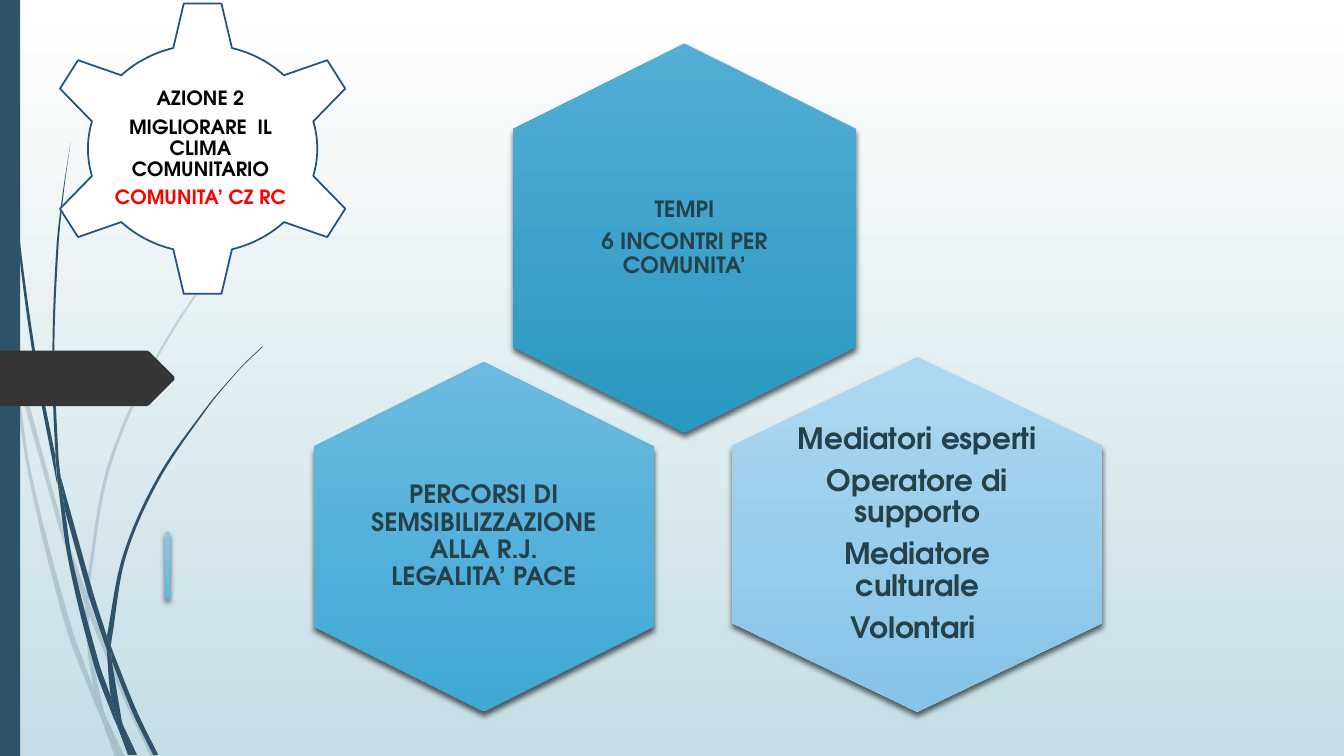
from math import dist

from lxml import etree
from pptx import Presentation
from pptx.dml.color import RGBColor
from pptx.enum.shapes import MSO_SHAPE
from pptx.enum.text import MSO_ANCHOR, PP_ALIGN
from pptx.oxml.ns import qn
from pptx.util import Pt

RECTANGLE, HEXAGON, GEAR = MSO_SHAPE.RECTANGLE, MSO_SHAPE.HEXAGON, MSO_SHAPE.GEAR_6
MIDDLE, CENTER = MSO_ANCHOR.MIDDLE, PP_ALIGN.CENTER
FONT = "TeX Gyre Adventor"
WHITE, BLACK, RED = RGBColor(255, 255, 255), RGBColor(0, 0, 0), RGBColor(255, 0, 0)
MIST = RGBColor(0xC5, 0xDE, 0xE5)
SLATE = RGBColor(0x2E, 0x53, 0x69)
CHARCOAL = RGBColor(0x35, 0x35, 0x35)
GEAR_BLUE = RGBColor(0x22, 0x51, 0x84)
HEXAGON_TEXT = RGBColor(0x25, 0x41, 0x49)

GRID = 0.72  # points per unit of the outlines below

# Each piece is two smooth edges that together close its outline.
PALE_STEMS = [
    ([(11, 350), (9, 322), (0, 282)], [(0, 299), (10, 344), (11, 350)]),
    ([(58, 522), (84, 599)], [(85, 586), (62, 520), (14, 345)], [(17, 376), (58, 522)]),
    ([(92, 607), (88, 596)], [(88, 610), (123, 694), (150, 751)],
     [(155, 751), (127, 692), (92, 607)]),
    ([(119, 751), (124, 751)], [(105, 711), (119, 751)]),
    ([(93, 683), (70, 619), (31, 469), (17, 376), (11, 350)],
     [(11, 350), (28, 470), (65, 621), (92, 693), (101, 714)],
     [(101, 714), (99, 707), (93, 683)]),
    ([(84, 599), (87, 646), (93, 683), (96, 692), (105, 711)],
     [(105, 711), (103, 706), (91, 646), (88, 610)], [(88, 608), (84, 599)]),
    ([(88, 584), (110, 462), (160, 349), (229, 245), (268, 198), (290, 175), (312, 154)],
     [(312, 153), (289, 175), (268, 197), (228, 244), (158, 348), (107, 461), (85, 584)],
     [(85, 586), (88, 596)]),
    ([(101, 714), (114, 751)], [(119, 751), (101, 714)]),
    ([(88, 608), (88, 610)], [(88, 596), (85, 586)], [(84, 599), (88, 608)]),
    ([(96, 692), (93, 683)], [(99, 707), (101, 714), (119, 751)],
     [(119, 751), (105, 711), (96, 692)]),
]
DARK_STEMS = [
    ([(7, 110), (17, 233), (33, 355), (56, 477), (57, 481)],
     [(55, 457), (55, 453), (36, 355), (19, 232), (8, 109), (5, 48), (4, 0)],
     [(3, 0), (4, 48), (7, 110)]),
    ([(88, 592), (106, 645)], [(106, 633), (106, 631), (93, 590), (60, 472)],
     [(64, 505), (88, 592)]),
    ([(113, 649), (110, 641)], [(111, 656), (132, 708), (152, 749)],
     [(157, 749), (136, 706), (113, 649)]),
    ([(110, 691), (98, 657), (72, 556), (64, 505), (57, 477)],
     [(57, 477), (68, 557), (93, 659), (111, 708), (117, 722)],
     [(116, 717), (110, 691)]),
    ([(60, 472), (58, 453), (54, 349), (58, 245), (63, 193), (70, 141)],
     [(70, 141), (62, 193), (56, 245), (52, 349), (55, 449), (60, 472)]),
    ([(133, 749), (136, 749)], [(122, 719), (133, 749)]),
    ([(57, 477), (64, 505)], [(60, 472), (55, 449)], [(55, 453), (57, 477)]),
    ([(111, 633), (125, 552), (158, 476), (205, 406), (231, 374), (245, 359), (261, 344)],
     [(260, 344), (245, 358), (231, 373), (204, 405), (156, 474), (122, 551), (106, 631)],
     [(110, 641), (111, 633)]),
    ([(117, 722), (127, 749)], [(131, 749), (117, 722)]),
    ([(106, 645), (110, 691), (116, 706), (122, 719)],
     [(121, 716), (111, 656)], [(109, 651), (106, 645)]),
    ([(106, 645), (109, 651), (111, 656)], [(110, 641), (106, 631)],
     [(106, 633), (106, 645)]),
    ([(116, 706), (110, 691)], [(116, 717), (117, 722), (130, 749)],
     [(133, 749), (122, 719), (116, 706)]),
]
ARROW = [(173, 29), (148, 54), (146, 55), (0, 55), (0, 0), (146, 0), (148, 1), (173, 26)]

# Box, text area size, font size, gradient colours, paragraphs
HEXAGONS = [
    ((366.5, 31, 244.8, 277.9), (167.8, 190.8), 16, ("53ADD5", "2998C2"),
     ["TEMPI", "6 INCONTRI PER COMUNITA’"]),
    ((224.3, 258.3, 242.6, 249.8), (163.4, 167.8), 18, ("6BBAE0", "40A8D7"),
     ["PERCORSI DI SEMSIBILIZZAZIONE ALLA R.J. LEGALITA’ PACE"]),
    ((118.1, 379.4, 3.6, 48.2), None, None, ("8BC8E9", "63B5E0"), []),
    ((523.1, 255, 264.2, 253.4), (176.4, 168.5), 21, ("AED8F1", "86C3E8"),
     ["Mediatori esperti", "Operatore di supporto", "Mediatore culturale", "Volontari "]),
]


def curve_through(points):
    """Return the points with two Bézier handles between each pair."""
    padded = [points[0], *points, points[-1]]
    curve = [points[0]]
    for before, start, end, after in zip(padded, padded[1:], padded[2:], padded[3:]):
        reach = dist(start, end) / 3
        leave = reach / dist(before, end)
        arrive = reach / dist(start, after)
        curve += [tuple(s + (e - b) * leave for b, s, e in zip(before, start, end)),
                  tuple(e - (a - s) * arrive for s, e, a in zip(start, end, after)),
                  end]
    return curve


def stem_outline(edges):
    outline = curve_through(edges[0])
    for edge in edges[1:]:
        if edge[0] != outline[-1]:
            outline += curve_through([outline[-1], edge[0]])[1:]
        outline += curve_through(edge)[1:]
    return outline


def bend_lines(shape):
    """Turn every three line segments of a freeform into one Bézier segment."""
    lines = list(shape._element.iter(qn("a:lnTo")))
    for first, second, third in zip(lines[::3], lines[1::3], lines[2::3]):
        first.tag = qn("a:cubicBezTo")
        for line in (second, third):
            first.append(line[0])
            line.getparent().remove(line)


def fill_plain(shape, color):
    shape.shadow.inherit = False
    shape.fill.solid()
    shape.fill.fore_color.rgb = color
    shape.line.fill.background()


def fill_downward(fill, top_color, bottom_color):
    fill.gradient()
    fill.gradient_angle = 270
    for stop, color in zip(fill.gradient_stops, (top_color, bottom_color)):
        stop.color.rgb = color


def add_shadow(shape):
    shape.shadow.inherit = False
    effects = shape._element.spPr.find(qn("a:effectLst"))
    shadow = etree.SubElement(effects, qn("a:outerShdw"), blurRad=str(Pt(4)),
                              dist=str(Pt(3)), dir="5400000", rotWithShape="0")
    color = etree.SubElement(shadow, qn("a:srgbClr"), val="000000")
    etree.SubElement(color, qn("a:alpha"), val="60000")


def draw_outline(slide, left, top, points, color):
    corners = [(Pt(GRID * x), Pt(GRID * y)) for x, y in points]
    builder = slide.shapes.build_freeform(*corners[0])
    builder.add_line_segments(corners[1:], close=True)
    shape = builder.convert_to_shape(Pt(left), Pt(top))
    fill_plain(shape, color)
    return shape


def draw_stems(slide, left, top):
    for stems, opacity in ((PALE_STEMS, 20), (DARK_STEMS, 100)):
        for edges in stems:
            shape = draw_outline(slide, left, top, stem_outline(edges), SLATE)
            bend_lines(shape)
            if opacity < 100:
                color = shape._element.spPr.find(qn("a:solidFill"))[0]
                etree.SubElement(color, qn("a:alpha"), val=str(opacity * 1000))


def draw_side_band(slide, left, top, width, height):
    band = slide.shapes.add_shape(RECTANGLE, Pt(left), Pt(top), Pt(width), Pt(height))
    fill_plain(band, SLATE)
    draw_outline(slide, left, top + 250.4, ARROW, CHARCOAL)


def add_text(slide, box, size, lines, inset=0):
    """Add a text area filling the box; lines are (text, color)."""
    frame = slide.shapes.add_textbox(*map(Pt, box)).text_frame
    frame.word_wrap = True
    frame.vertical_anchor = MIDDLE
    frame.margin_left = frame.margin_right = Pt(inset)
    frame.margin_top = frame.margin_bottom = Pt(inset)
    frame.text = "\n".join(text for text, _ in lines)
    for para, (_, color) in zip(frame.paragraphs, lines):
        para.alignment = CENTER
        para.line_spacing = 0.9
        para.space_after = Pt(0.35 * size)
        font = para.runs[0].font
        font.name, font.size, font.bold = FONT, Pt(size), True
        font.color.rgb = color


def draw_gear(slide, left, top, width, height):
    gear = slide.shapes.add_shape(GEAR, Pt(left), Pt(top), Pt(width), Pt(height))
    fill_plain(gear, WHITE)
    gear.line.color.rgb = GEAR_BLUE
    gear.line.width = Pt(1.25)
    lines = [("AZIONE 2", BLACK), ("MIGLIORARE  IL CLIMA COMUNITARIO", BLACK),
             ("COMUNITA’ CZ RC", RED)]
    add_text(slide, (left + 41.7, top + 53.8, 141.1, 105.1), 14, lines, 1.4)


def draw_hexagon(slide, box, area, size, colors, texts):
    """Fill the box with a hexagon standing on its point."""
    left, top, width, height = box
    shift = (height - width) / 2
    hexagon = slide.shapes.add_shape(HEXAGON, Pt(left - shift), Pt(top + shift),
                                     Pt(height), Pt(width))
    hexagon.rotation = 90
    fill_downward(hexagon.fill, *map(RGBColor.from_string, colors))
    hexagon._element.spPr.find(qn("a:gradFill")).set("rotWithShape", "0")
    hexagon.line.fill.background()
    add_shadow(hexagon)
    if texts:
        text_box = (left + (width - area[0]) / 2, top + (height - area[1]) / 2, *area)
        add_text(slide, text_box, size, [(text, HEXAGON_TEXT) for text in texts])


def main():
    deck = Presentation()
    deck.slide_width, deck.slide_height = Pt(960), Pt(540)
    slide = deck.slides.add_slide(deck.slide_layouts[6])
    fill_downward(slide.background.fill, WHITE, MIST)
    draw_stems(slide, 0, 0)
    draw_side_band(slide, 0, 0, 14.4, 540)
    draw_gear(slide, 31, 0, 227.5, 212.4)
    for hexagon in HEXAGONS:
        draw_hexagon(slide, *hexagon)
    deck.save("out.pptx")


if __name__ == "__main__":
    main()
